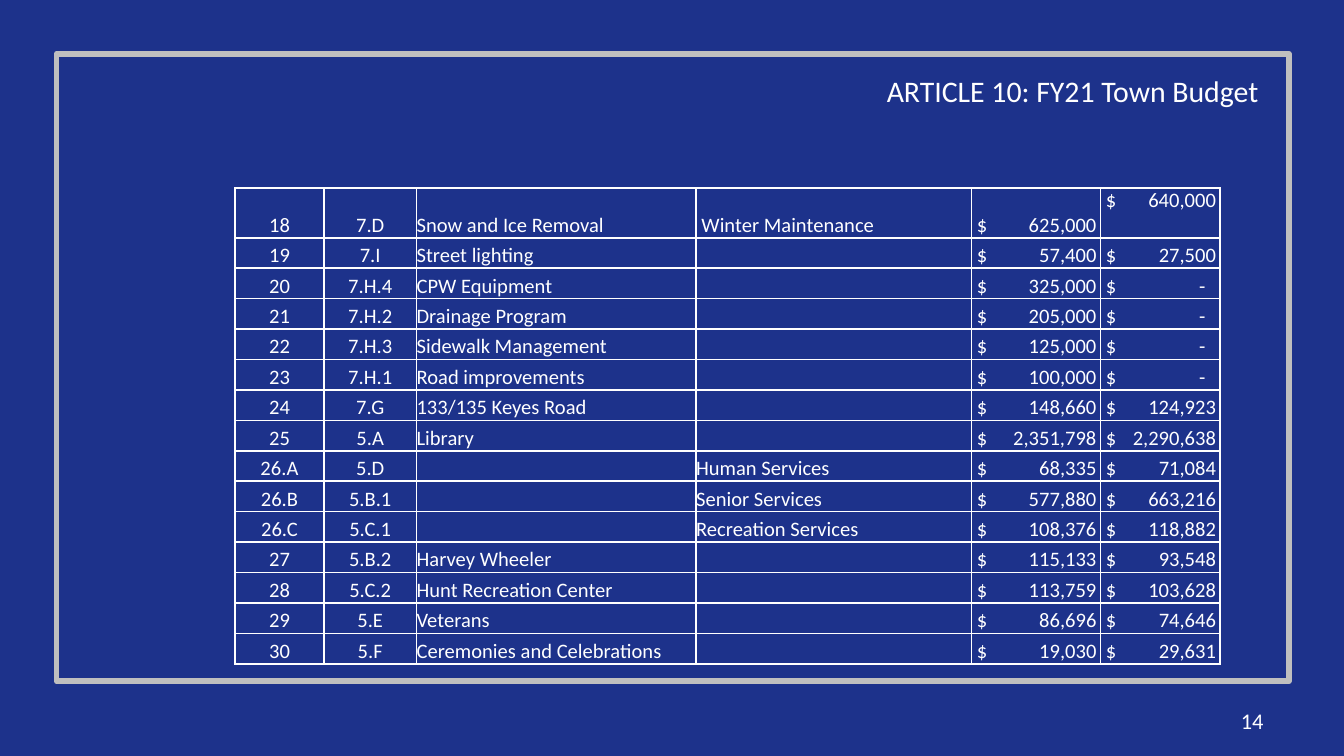
from lxml import etree
from pptx import Presentation
from pptx import util as u
from pptx.dml.color import RGBColor
from pptx.enum import shapes, text
from pptx.oxml.ns import qn

NAVY = RGBColor(0x1D, 0x32, 0x8B)
WHITE = RGBColor(0xFF, 0xFF, 0xFF)
GREY = RGBColor(0xBF, 0xBF, 0xBF)
FONT = "Calibri"

SLIDE_W = 10
SLIDE_H = SLIDE_W * 9 / 16
COLS = [0.66, 0.69, 2.08, 2.05, 0.96, 0.89]
ROW_H = 3.4 / 15
FIRST_ROW_H = 0.37
PAD = 0.04

# Line, account, department, division, two yearly amounts
BUDGET = [
    ("18", "7.D", "Snow and Ice Removal", "Winter Maintenance", "625,000", "640,000"),
    ("19", "7.I", "Street lighting", "", "57,400", "27,500"),
    ("20", "7.H.4", "CPW Equipment", "", "325,000", "-"),
    ("21", "7.H.2", "Drainage Program", "", "205,000", "-"),
    ("22", "7.H.3", "Sidewalk Management", "", "125,000", "-"),
    ("23", "7.H.1", "Road improvements", "", "100,000", "-"),
    ("24", "7.G", "133/135 Keyes Road", "", "148,660", "124,923"),
    ("25", "5.A", "Library", "", "2,351,798", "2,290,638"),
    ("26.A", "5.D", "", "Human Services", "68,335", "71,084"),
    ("26.B", "5.B.1", "", "Senior Services", "577,880", "663,216"),
    ("26.C", "5.C.1", "", "Recreation Services", "108,376", "118,882"),
    ("27", "5.B.2", "Harvey Wheeler", "", "115,133", "93,548"),
    ("28", "5.C.2", "Hunt Recreation Center", "", "113,759", "103,628"),
    ("29", "5.E", "Veterans", "", "86,696", "74,646"),
    ("30", "5.F", "Ceremonies and Celebrations", "", "19,030", "29,631"),
]


def inches(box):
    return [u.Inches(v) for v in box]


def style(p, size):
    p.font.size = u.Pt(size)
    p.font.name = FONT
    p.font.color.rgb = WHITE


def add_frame(s, box):
    sp = s.shapes.add_shape(shapes.MSO_SHAPE.RECTANGLE, *inches(box))
    sp.shadow.inherit = False
    sp.fill.background()
    sp.line.color.rgb = GREY
    sp.line.width = u.Pt(3)
    etree.SubElement(sp.line._get_or_add_ln(), qn("a:round"))


def add_label(s, box, words, size, align, anchor):
    tf = s.shapes.add_textbox(*inches(box)).text_frame
    tf.word_wrap = True
    tf.vertical_anchor = anchor
    p = tf.paragraphs[0]
    p.text = words
    p.alignment = align
    style(p, size)


def add_borders(cell):
    """White one-point lines on all sides, placed before the cell's fill."""
    tcPr = cell._tc.get_or_add_tcPr()
    for i, side in enumerate(("lnL", "lnR", "lnT", "lnB")):
        ln = etree.Element(qn("a:" + side), w=str(u.Pt(1)))
        fill = etree.SubElement(ln, qn("a:solidFill"))
        etree.SubElement(fill, qn("a:srgbClr"), val=str(WHITE))
        tcPr.insert(i, ln)


def add_right_tab(p, pos):
    tabs = etree.SubElement(p._p.get_or_add_pPr(), qn("a:tabLst"))
    etree.SubElement(tabs, qn("a:tab"), pos=str(u.Inches(pos)), algn="r")


def fill_cell(cell, col, value):
    cell.margin_left = cell.margin_right = cell.margin_top = cell.margin_bottom = 0
    cell.vertical_anchor = text.MSO_ANCHOR.BOTTOM
    cell.fill.background()
    add_borders(cell)
    p = cell.text_frame.paragraphs[0]
    if col < 2:
        p.alignment = text.PP_ALIGN.CENTER
    if col >= 4:  # dollar sign at the left, amount against a right tab
        cell.margin_left = u.Inches(PAD)
        add_right_tab(p, COLS[col] - (0.15 if value == "-" else 0.07))
        value = "$\t" + value
    p.text = value
    style(p, 11)


def add_budget_table(s, left, top):
    height = FIRST_ROW_H + ROW_H * (len(BUDGET) - 1)
    box = inches((left, top, sum(COLS), height))
    tbl = s.shapes.add_table(len(BUDGET), len(COLS), *box).table
    tbl.first_row = tbl.horz_banding = False
    for column, width in zip(tbl.columns, COLS):
        column.width = u.Inches(width)
    for i, values in enumerate(BUDGET):
        tbl.rows[i].height = u.Inches(ROW_H if i else FIRST_ROW_H)
        for j, value in enumerate(values):
            fill_cell(tbl.cell(i, j), j, value)
    # The tall first row
    tbl.cell(0, 3).margin_left = u.Inches(PAD)
    tbl.cell(0, 5).vertical_anchor = text.MSO_ANCHOR.TOP


def main():
    prs = Presentation()
    prs.slide_width, prs.slide_height = inches((SLIDE_W, SLIDE_H))
    s = prs.slides.add_slide(prs.slide_layouts[6])
    s.background.fill.solid()
    s.background.fill.fore_color.rgb = NAVY

    add_frame(s, (0.42, 0.4, 9.17, 4.67))
    # Page number and title
    add_label(s, (7.17, 5.21, 2.33, 0.3), "14", 12,
              text.PP_ALIGN.RIGHT, text.MSO_ANCHOR.MIDDLE)
    add_label(s, (6.5, 0.49, 3, 0.37), "ARTICLE 10: FY21 Town Budget", 16,
              text.PP_ALIGN.LEFT, text.MSO_ANCHOR.TOP)
    add_budget_table(s, 1.75, 1.4)
    prs.save("out.pptx")


if __name__ == "__main__":
    main()
